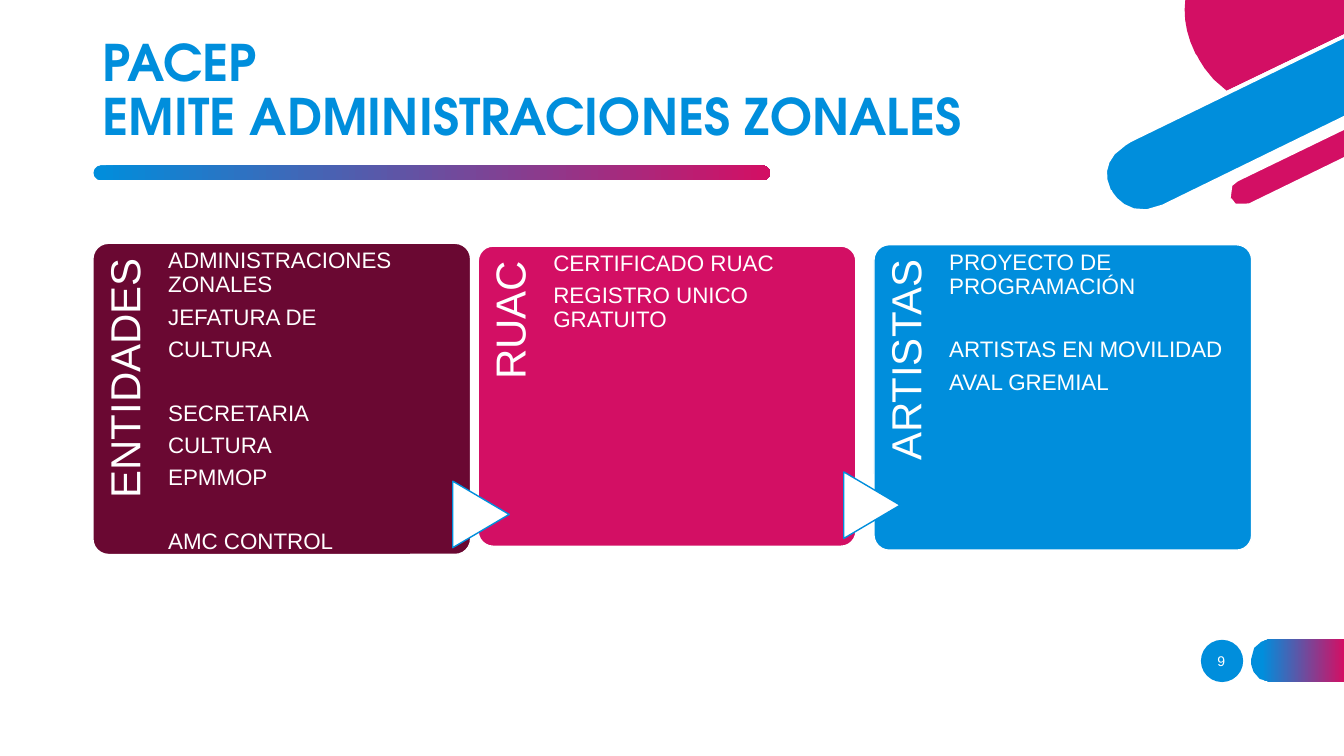
from dataclasses import dataclass
from math import dist

from pptx import Presentation
from pptx.dml.color import RGBColor as Rgb
from pptx.enum.shapes import MSO_SHAPE as Kind
from pptx.enum.text import MSO_ANCHOR as Anchor, PP_ALIGN as Align
from pptx.util import Pt


@dataclass(frozen=True)
class Theme:
    blue: str = "008EDC"
    pink: str = "D30F64"
    wine: str = "6A0832"
    white: str = "FFFFFF"
    head: str = "TeX Gyre Adventor"
    body: str = "Arial"
    title: float = 36
    label: float = 30
    text: float = 16
    page: float = 10


theme = Theme()

# Content: an empty item leaves one line of space before the next
title = ["PACEP", "EMITE ADMINISTRACIONES ZONALES"]
page = "9"
cards = [
    dict(label="ENTIDADES", fill=theme.wine, box=(66.4, 173.8, 269.8, 222.3), arrow=None,
         items=["ADMINISTRACIONES ZONALES", "JEFATURA DE", "CULTURA", "",
                "SECRETARIA", "CULTURA", "EPMMOP", "", "AMC CONTROL"]),
    dict(label="RUAC", fill=theme.pink, box=(341.6, 175.8, 269.8, 214.4), arrow=(319.8, 347.3),
         items=["CERTIFICADO RUAC", "REGISTRO UNICO GRATUITO"]),
    dict(label="ARTISTAS", fill=theme.blue, box=(624.3, 174.8, 269.8, 218.2), arrow=(599.1, 340.7),
         items=["PROYECTO DE PROGRAMACIÓN", "", "ARTISTAS EN MOVILIDAD", "AVAL GREMIAL"]),
]

# Outlines: a pair is a corner, six numbers are a curve (two handles, end)
tab = [(908.6, 487.4), (960, 487.4), (960, 456.5), (908.6, 456.5),
       (908.6, 456.5, 893.5, 456.5, 893.5, 471.6), (893.5, 472.3),
       (893.5, 472.3, 893.5, 487.4, 908.6, 487.4)]
corner = [
    # Disc edge
    (theme.white, [
        (960, 58.3), (940.3, 67.7), (917.3, 79.2, 895.7, 77.8, 877.7, 64.1),
        (863.3, 53.3, 856.1, 39.6, 856.1, 39.6), (855.4, 37.4),
        (848.9, 24.5, 846, 11.5, 848.2, 0), (845.3, 0),
        (843.1, 12.2, 846, 25.2, 852.5, 38.9), (853.9, 41),
        (853.9, 41.8, 861.1, 55.4, 875.5, 66.2),
        (884.2, 72.7, 895.7, 78.5, 910.8, 78.5),
        (919.4, 78.5, 929.5, 76.3, 941.8, 70.6), (960, 61.9)]),
    # Band
    (theme.blue, [
        (807.1, 100.1), (807.1, 100.1, 781.2, 113, 792.7, 136.1), (792.7, 136.8),
        (792.7, 136.8, 804.2, 159.8, 830.9, 146.9), (960, 84.2), (960, 25.9)]),
    # Disc
    (theme.pink, [
        (855.4, 40.3), (855.4, 40.3, 861.8, 54.7, 876.2, 64.8), (960, 24.5), (960, 0),
        (846.7, 0), (845.3, 10.8, 846.7, 23.8, 853.9, 38.2)]),
    # Strip
    (theme.pink, [
        (960, 90.7), (883.4, 128.2), (883.4, 128.2, 873.4, 133.2, 878.4, 141.8),
        (878.4, 142.6), (878.4, 142.6, 882.7, 151.9, 892.8, 146.9), (960, 113.8)]),
    # Strip edge
    (theme.white, [
        (892.1, 145.4), (883.4, 149.8, 879.8, 142.6, 879.8, 141.8), (879.1, 141.8),
        (875.5, 133.9, 884.2, 129.6, 884.2, 129.6), (960, 92.9), (960, 89.3),
        (882.7, 126.7), (882.7, 126.7, 877.7, 129.6, 876.2, 134.6),
        (874.8, 137.5, 875.5, 140.4, 877, 143.3),
        (878.4, 146.2, 882, 149.8, 887, 149.8),
        (889.2, 149.8, 891.4, 149.8, 893.5, 148.3), (960, 115.9), (960, 112.3)]),
    # Band edge
    (theme.white, [
        (830.2, 146.2), (805.7, 157.7, 794.2, 136.8, 794.2, 136.1), (793.4, 135.4),
        (789.1, 126, 789.8, 118.1, 796.3, 110.2),
        (801.4, 105.1, 807.8, 101.5, 807.8, 101.5), (960, 27.4), (960, 24.5),
        (806.4, 98.6), (805.7, 99.4, 793.4, 105.1, 789.1, 117.4),
        (787, 123.1, 787.7, 129.6, 791.3, 136.8), (791.3, 137.5),
        (791.3, 137.5, 799.2, 152.6, 815.8, 152.6),
        (820.1, 152.6, 825.1, 151.2, 830.9, 148.3), (960, 85.7), (960, 82.8)]),
]

deck = Presentation()
deck.slide_width, deck.slide_height = Pt(960), Pt(540)
slide = deck.slides.add_slide(deck.slide_layouts[6])
shapes = slide.shapes


def paint(shape, fill, line=None, start=0):
    """Fill with one colour, or with the blue to pink blend when fill is None."""
    shape.shadow.inherit = False
    if fill:
        shape.fill.solid()
        shape.fill.fore_color.rgb = Rgb.from_string(fill)
    else:
        shape.fill.gradient()
        shape.fill.gradient_angle = 0
        ends = ((start, theme.blue), (1, theme.pink))
        for stop, (at, tone) in zip(shape.fill.gradient_stops, ends):
            stop.position = at
            stop.color.rgb = Rgb.from_string(tone)
    if line:
        shape.line.color.rgb = Rgb.from_string(line)
        shape.line.width = Pt(1)
    else:
        shape.line.fill.background()


def preset(kind, box, fill, line=None, bend=None):
    shape = shapes.add_shape(kind, *map(Pt, box))
    if bend is not None:
        shape.adjustments[0] = bend
    paint(shape, fill, line)
    return shape


def trace(path):
    """Turn corners and curves into few points, more on longer curves."""
    dots = [path[0]]
    for part in path[1:]:
        if len(part) == 2:
            dots.append(part)
            continue
        hull = [dots[-1], part[:2], part[2:4], part[4:]]
        size = sum(dist(a, b) for a, b in zip(hull, hull[1:]))
        steps = min(6, max(1, round(size / 8)))
        for step in range(1, steps + 1):
            t = step / steps
            mix = ((1 - t) ** 3, 3 * t * (1 - t) ** 2, 3 * t * t * (1 - t), t ** 3)
            dots.append(tuple(sum(m * p[axis] for m, p in zip(mix, hull)) for axis in (0, 1)))
    return [(Pt(x), Pt(y)) for x, y in dots]


def outline(path, fill, start=0):
    first, *rest = trace(path)
    pen = shapes.build_freeform(*first)
    pen.add_line_segments(rest, close=True)
    paint(pen.convert_to_shape(), fill, start=start)


def frame(box, pads, anchor=Anchor.TOP):
    shape = shapes.add_textbox(*map(Pt, box))
    text = shape.text_frame
    text.word_wrap, text.vertical_anchor = True, anchor
    (text.margin_left, text.margin_top,
     text.margin_right, text.margin_bottom) = map(Pt, pads)
    return shape, text


def write(para, words, size, tone=theme.white, font=theme.body, bold=False):
    run = para.add_run()
    run.text = words
    run.font.size, run.font.name, run.font.bold = Pt(size), font, bold
    run.font.color.rgb = Rgb.from_string(tone)


# Page mark and corner art
preset(Kind.OVAL, (857.8, 457, 30.2, 30.2), theme.blue)
outline(tab, None, start=0.12)
for fill, path in corner:
    outline(path, fill)
preset(Kind.ROUNDED_RECTANGLE, (66.8, 118.1, 483.2, 10.8), None, bend=0.5)
_, text = frame((850.8, 457.9, 43.2, 28.8), (7.2, 3.6, 7.2, 3.6), Anchor.MIDDLE)
text.paragraphs[0].alignment = Align.CENTER
write(text.paragraphs[0], page, theme.page)

# Cards
side = 53.7    # width of the upright label
after = 5.8    # space below each item
blank = 22.4   # height of one skipped line
for card in cards:
    x, y, w, h = card["box"]
    preset(Kind.ROUNDED_RECTANGLE, card["box"], card["fill"], theme.white, 0.05)

    size = 0.83 * h
    shape, text = frame((x + (side - size) / 2, y + (size - side) / 2, size, side),
                        (0, 7.9, 10.5, 0))
    shape.rotation = 270
    para = text.paragraphs[0]
    para.alignment, para.line_spacing = Align.RIGHT, 0.9
    write(para, card["label"], theme.label)

    if card["arrow"]:
        arrow = preset(Kind.FLOWCHART_EXTRACT, (*card["arrow"], 47.5, 40.3),
                       theme.white, theme.blue)
        arrow.rotation = 90

    _, text = frame((x + side, y, 201, h), (0, 4.3, 0, 0))
    para, gap = text.paragraphs[0], 0
    for row, item in enumerate(card["items"]):
        if not item:
            gap = blank
            continue
        if row:
            para = text.add_paragraph()
        para.line_spacing, para.space_before, para.space_after = 0.9, Pt(gap), Pt(after)
        write(para, item, theme.text)
        gap = 0

# Title
_, text = frame((66.2, 28.8, 712.8, 74.2), (7.2, 3.6, 7.2, 3.6), Anchor.MIDDLE)
para = text.paragraphs[0]
para.line_spacing = 0.9
for row, words in enumerate(title):
    if row:
        para.add_line_break()
    write(para, words, theme.title, theme.blue, theme.head, True)

deck.save("out.pptx")
